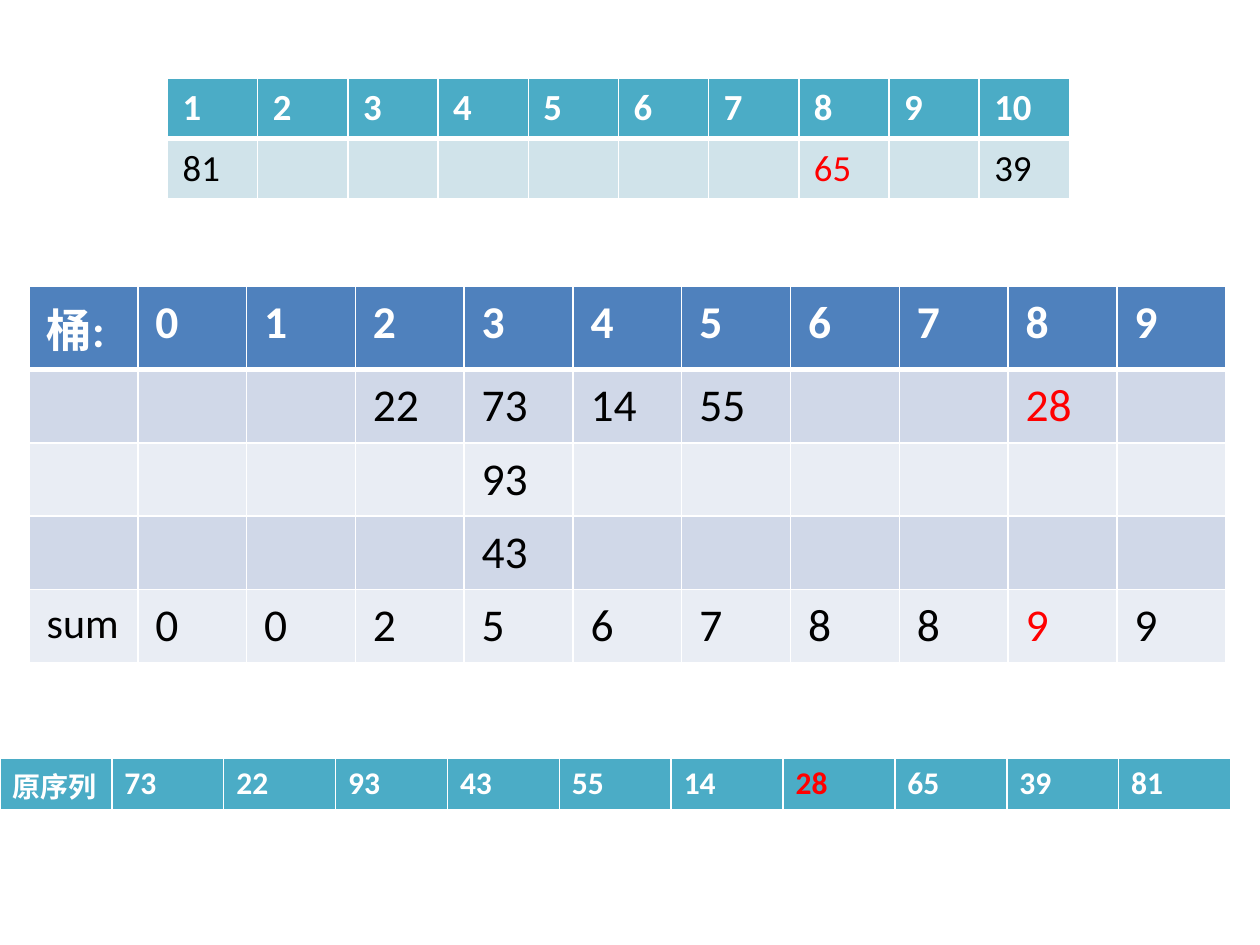
from lxml import etree
from pptx import Presentation
from pptx.dml.color import RGBColor
from pptx.oxml import ns
from pptx.util import Inches, Pt


def rgb(color):
    return RGBColor.from_string(color)


def set_borders(cell, bottom):
    """Draw white 1 pt cell borders, with the bottom one as wide as given."""
    tcPr = cell._tc.get_or_add_tcPr()
    for i, (side, width) in enumerate(zip("LRTB", (1, 1, 1, bottom))):
        ln = etree.Element(ns.qn("a:ln" + side), w=str(Pt(width)))
        fill = etree.SubElement(ln, ns.qn("a:solidFill"))
        etree.SubElement(fill, ns.qn("a:srgbClr"), val="FFFFFF")
        tcPr.insert(i, ln)


prs = Presentation()
prs.slide_width, prs.slide_height = Inches(10), Inches(7.5)
s = prs.slides.add_slide(prs.slide_layouts[6])

bucket_rows = [
    ["桶:", *range(10)],
    ["", "", "", 22, 73, 14, 55, "", "", 28, ""],
    ["", "", "", "", 93, "", "", "", "", "", ""],
    ["", "", "", "", 43, "", "", "", "", "", ""],
    ["sum", 0, 0, 2, 5, 6, 7, 8, 8, 9, 9],
]
output_rows = [
    list(range(1, 11)),
    [81, "", "", "", "", "", "", 65, "", 39],
]
sequence_rows = [["原序列", 73, 22, 93, 43, 55, 14, 28, 65, 39, 81]]

# rows, left, top, width, row height, font size, side and top margins,
# header fill, body fills, red cells, label sizes by cell
tables = [
    (bucket_rows, 0.23, 2.27, 9.5, 0.58, 26, (0.14, 0.07),
     "4F81BD", ("D0D8E8", "E9EDF4"), {(1, 9), (4, 9)}, {(4, 0): 24}),
    (output_rows, 1.33, 0.62, 7.16, 0.48, 21, (0.12, 0.06),
     "4BACC6", ("D0E3EA",), {(1, 7)}, {}),
    (sequence_rows, 0, 6.02, 9.77, 0.41, 18, (0.1, 0.05),
     "4BACC6", (), {(0, 7)}, {(0, 0): 16}),
]

for (rows, left, top, width, row_height, size, (side, edge),
     header, bands, red, label_sizes) in tables:
    tbl = s.shapes.add_table(
        len(rows), len(rows[0]), Inches(left), Inches(top),
        Inches(width), Inches(row_height * len(rows))).table
    for r, values in enumerate(rows):
        tbl.rows[r].height = Inches(row_height)
        for c, value in enumerate(values):
            cell = tbl.cell(r, c)
            cell.margin_left = cell.margin_right = Inches(side)
            cell.margin_top = cell.margin_bottom = Inches(edge)
            cell.fill.solid()
            cell.fill.fore_color.rgb = rgb(
                bands[(r - 1) % len(bands)] if r else header)
            set_borders(cell, bottom=1 if r else 3)
            if value == "":
                continue
            p = cell.text_frame.paragraphs[0]
            p.text = str(value)
            font = p.runs[0].font
            font.name = "Calibri"
            font.size = Pt(label_sizes.get((r, c), size))
            font.bold = r == 0
            base_color = "000000" if r else "FFFFFF"
            font.color.rgb = rgb("FF0000" if (r, c) in red else base_color)

prs.save("out.pptx")
